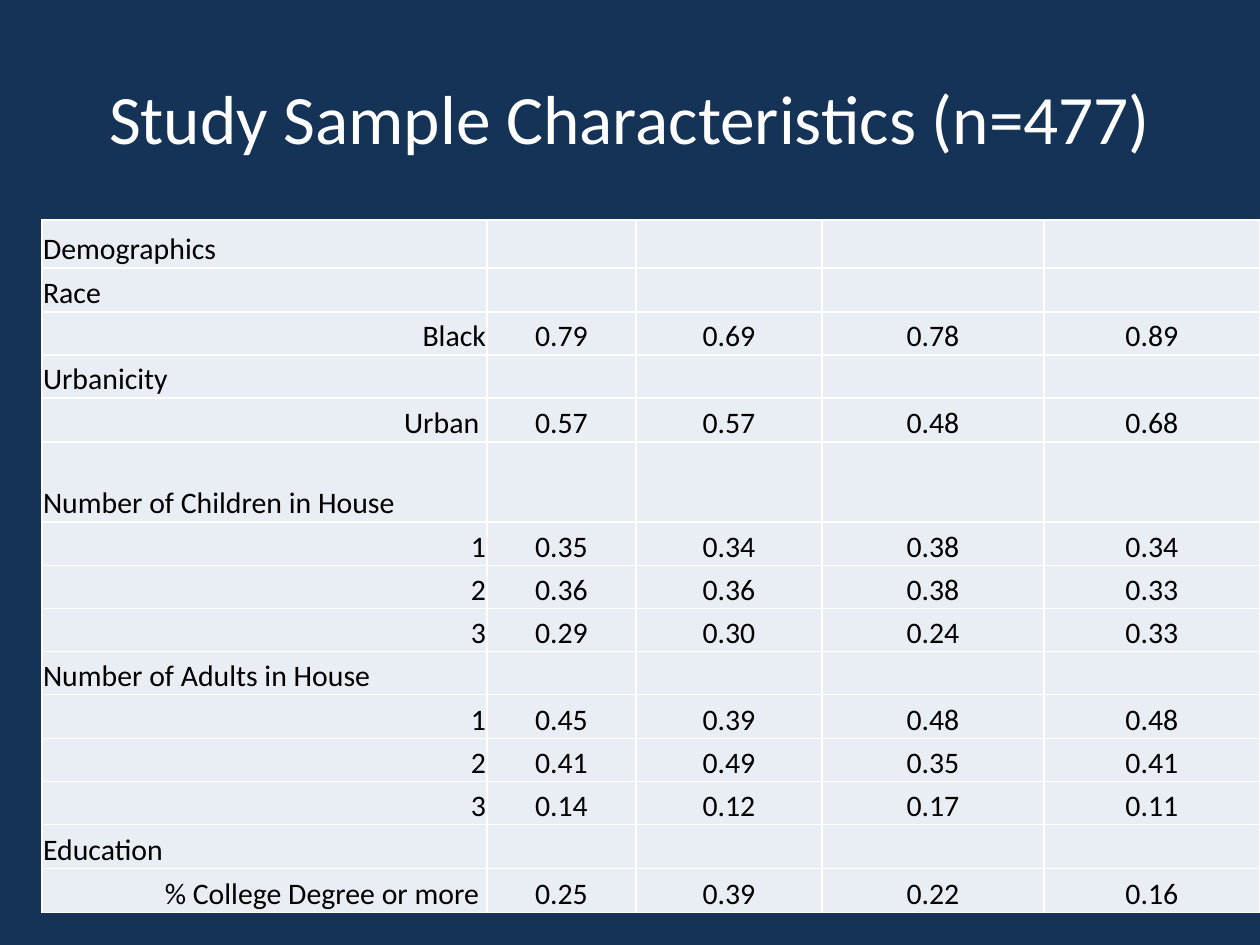
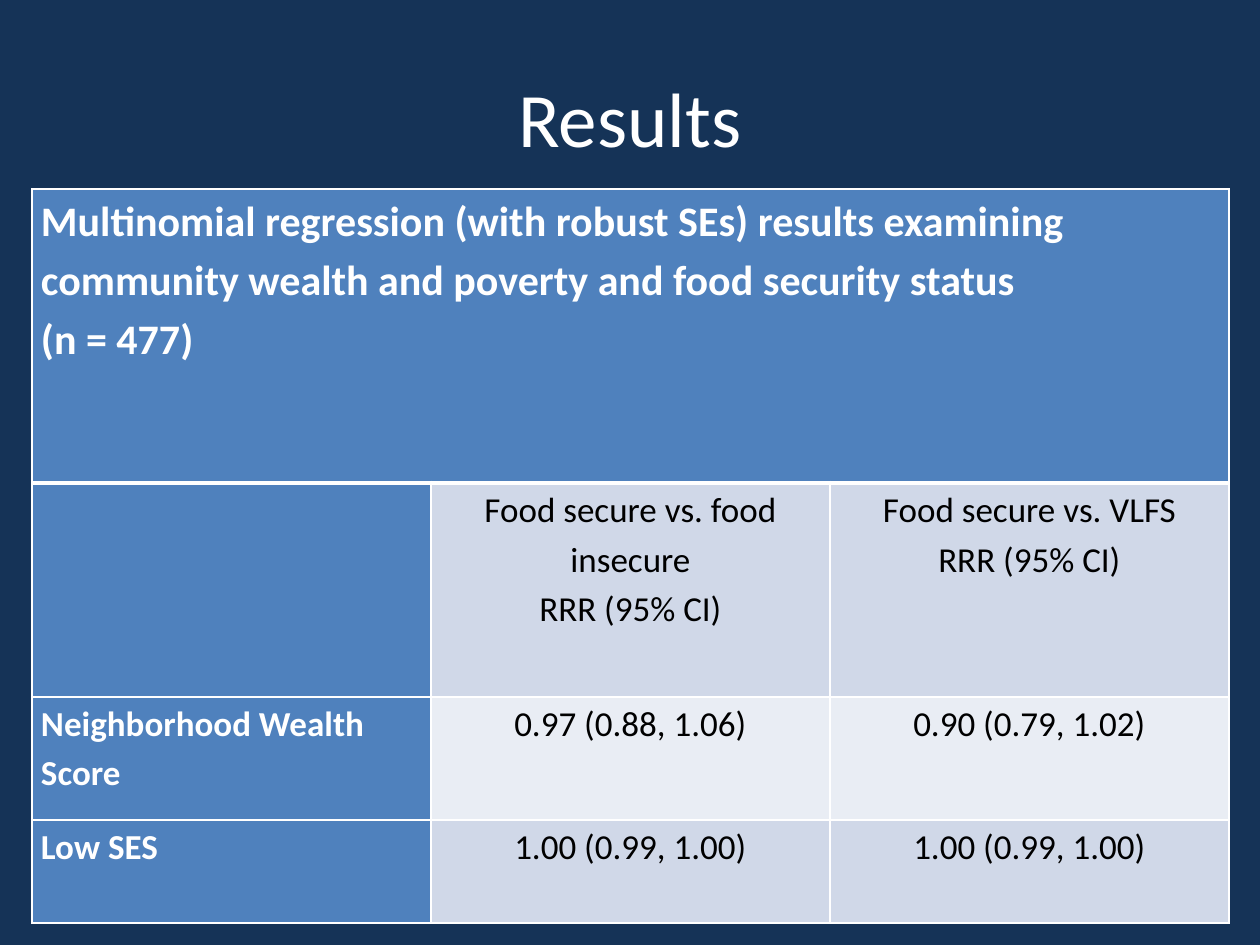
"""Build two slides: sample characteristics and regression results."""
from pptx import Presentation
from pptx.dml.color import RGBColor
from pptx.enum.text import MSO_ANCHOR as Anchor, PP_ALIGN as Align
from pptx.oxml import parse_xml
from pptx.oxml.ns import nsdecls
from pptx.util import Pt

NAVY = RGBColor(0x15, 0x33, 0x57)
BLUE = RGBColor(0x4F, 0x81, 0xBD)
MID = RGBColor(0xD0, 0xD8, 0xE8)
PALE = RGBColor(0xE9, 0xED, 0xF4)
WHITE = RGBColor(0xFF, 0xFF, 0xFF)
BLACK = RGBColor(0, 0, 0)
FONT = "Calibri"
SCALE = 914400 / 126


def px(*nums):
    return [round(num * SCALE) for num in nums]


def style(paras, size, color, bold, align):
    for para in paras:
        para.alignment = align
        for run in para.runs:
            run.font.name = FONT
            run.font.size = Pt(size)
            run.font.bold = bold
            run.font.color.rgb = color


prs = Presentation()
prs.slide_width, prs.slide_height = px(1260, 945)
fill = prs.slide_master.background.fill
fill.solid()
fill.fore_color.rgb = NAVY

sample = [
    ["Demographics"],
    ["Race"],
    ["Black", "0.79", "0.69", "0.78", "0.89"],
    ["Urbanicity"],
    ["Urban ", "0.57", "0.57", "0.48", "0.68"],
    ["Number of Children in House"],
    ["1", "0.35", "0.34", "0.38", "0.34"],
    ["2", "0.36", "0.36", "0.38", "0.33"],
    ["3", "0.29", "0.30", "0.24", "0.33"],
    ["Number of Adults in House"],
    ["1", "0.45", "0.39", "0.48", "0.48"],
    ["2", "0.41", "0.49", "0.35", "0.41"],
    ["3", "0.14", "0.12", "0.17", "0.11"],
    ["Education"],
    ["% College Degree or more ", "0.25", "0.39", "0.22", "0.16"],
]
results = [
    ["Multinomial regression (with robust SEs) results examining community "
     "wealth and poverty and food security status\n(n = 477)"],
    ["", "Food secure vs. food insecure\nRRR (95% CI)",
     "Food secure vs. VLFS\nRRR (95% CI)"],
    ["Neighborhood Wealth Score", "0.97 (0.88, 1.06)", "0.90 (0.79, 1.02)"],
    ["Low SES", "1.00 (0.99, 1.00)", "1.00 (0.99, 1.00)"],
]
pages = [
    ("Study Sample Characteristics (n=477)", 39.6, sample, (42, 220),
     [445, 149, 186, 222, 216],
     [48, 44, 43, 43, 44, 80, 44, 43, 43, 43, 44, 43, 43, 44, 44]),
    ("Results", 44, results, (32, 189), [399] * 3, [294, 214, 123, 103]),
]

for name, size, data, spot, cols, rows in pages:
    slide = prs.slides.add_slide(prs.slide_layouts[5])
    title = slide.shapes.title
    title.left, title.top, title.width, title.height = px(63, 38, 1134, 157)
    title.text_frame.text = name
    title.text_frame.vertical_anchor = Anchor.MIDDLE
    style(title.text_frame.paragraphs, size, WHITE, False, Align.CENTER)

    place = px(*spot, sum(cols), sum(rows))
    table = slide.shapes.add_table(len(rows), len(cols), *place).table
    for col, width in zip(table.columns, px(*cols)):
        col.width = width
    for row, height in zip(table.rows, px(*rows)):
        row.height = height

    model = data is results
    table.first_row = model
    table.horz_banding = False
    for i, line in enumerate(data):
        for j in range(len(cols)):
            cell = table.cell(i, j)
            side = 9 if model else 1
            cell.margin_left, cell.margin_right = px(side, side)
            cell.margin_top, cell.margin_bottom = px(0 if model else 1, 0)
            cell.vertical_anchor = Anchor.TOP if model else Anchor.BOTTOM
            for edge in "LRTB":
                thick = model and (i, edge) in [(0, "B"), (1, "T")]
                cell._tc.get_or_add_tcPr().append(parse_xml(
                    f'<a:ln{edge} {nsdecls("a")} w="{Pt(3 if thick else 1)}">'
                    f'<a:solidFill><a:srgbClr val="{WHITE}"/></a:solidFill>'
                    f'</a:ln{edge}>'))
            head = model and (i == 0 or j == 0)
            cell.fill.solid()
            cell.fill.fore_color.rgb = (
                BLUE if head else MID if model and i % 2 else PALE)
            if j >= len(line):
                continue
            cell.text_frame.text = line[j]
            paras = cell.text_frame.paragraphs
            if model:
                for para in paras:
                    para.line_spacing = 1.15
                style(paras, 24 if i == 0 else 20, WHITE if head else BLACK,
                      head, Align.LEFT if head else Align.CENTER)
            else:
                align = (Align.CENTER if j else
                         Align.LEFT if len(line) == 1 else Align.RIGHT)
                style(paras, 17, BLACK, False, align)
    if model:
        table.cell(0, 0).merge(table.cell(0, 2))

prs.save("out.pptx")
